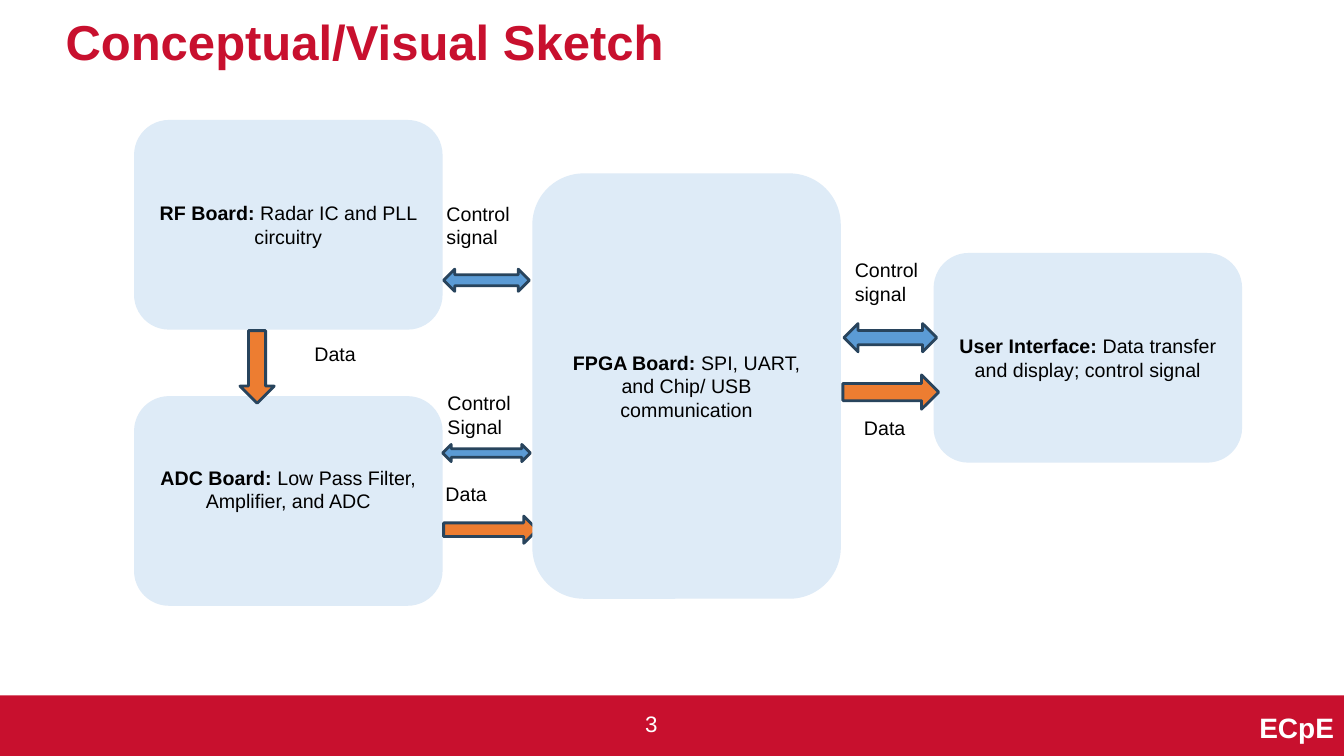
from dataclasses import dataclass

from pptx import Presentation
from pptx.dml.color import RGBColor
from pptx.enum.shapes import MSO_SHAPE as Shape
from pptx.enum.text import MSO_ANCHOR as Anchor, MSO_AUTO_SIZE as AutoSize, PP_ALIGN as Align
from pptx.util import Inches, Pt

COLORS = {
    "red": "C8102E",
    "white": "FFFFFF",
    "black": "000000",
    "board": "DEEBF7",
    "control": "5B9BD5",
    "data": "ED7D31",
    "outline": "28445D",
}
BOARD_W = 3.06
BOARD_H = 2.08
LABEL_H = 0.71


@dataclass
class Board:
    name: str
    detail: str
    left: float
    top: float
    height: float = BOARD_H
    bottom_inset: float = 0.05


@dataclass
class Arrow:
    kind: Shape
    signal: str
    left: float
    top: float
    width: float
    height: float


@dataclass
class Label:
    text: str
    left: float
    top: float
    width: float


LEFT_BOARDS = [
    Board("RF Board: ", "Radar IC and PLL circuitry", 1.33, 1.19),
    Board("ADC Board: ", "Low Pass Filter, Amplifier, and ADC", 1.33, 3.93, bottom_inset=0.28),
]
USER_INTERFACE = Board("User Interface: ", "Data transfer and display; control signal", 9.26, 2.51)
FPGA = Board("FPGA Board: ", "SPI, UART, and Chip/ USB communication", 5.28, 1.72, height=4.22)

ARROWS = [
    Arrow(Shape.LEFT_RIGHT_ARROW, "control", 4.4, 2.67, 0.85, 0.22),
    Arrow(Shape.LEFT_RIGHT_ARROW, "control", 4.39, 4.41, 0.87, 0.17),
    Arrow(Shape.LEFT_RIGHT_ARROW, "control", 8.37, 3.21, 0.92, 0.28),
    Arrow(Shape.RIGHT_ARROW, "data", 4.4, 5.12, 0.93, 0.27),
    Arrow(Shape.RIGHT_ARROW, "data", 8.36, 3.72, 0.95, 0.34),
    Arrow(Shape.DOWN_ARROW, "data", 2.38, 3.28, 0.34, 0.72),
]

LABELS = [
    Label("Control signal", 4.33, 1.95, 1.05),
    Label("Control Signal", 4.34, 3.83, 0.97),
    Label("Control signal", 8.38, 2.51, 0.98),
    Label("Data", 4.32, 4.73, 1.07),
    Label("Data", 8.47, 4.08, 0.95),
    Label("Data", 3.02, 3.34, 0.9),
]


def rgb(name: str) -> RGBColor:
    return RGBColor.from_string(COLORS[name])


def add_run(p, text: str, *, size: float = 14, color: str = "black", bold: bool = False) -> None:
    r = p.add_run()
    r.text = text
    r.font.name = "Arial"
    r.font.size = Pt(size)
    r.font.bold = bold
    r.font.color.rgb = rgb(color)


def add_text(slide, text: str, left: float, top: float, width: float, height: float, *,
             align: Align = Align.LEFT, anchor: Anchor = Anchor.TOP, **font) -> None:
    s = slide.shapes.add_textbox(Inches(left), Inches(top), Inches(width), Inches(height))
    tf = s.text_frame
    tf.word_wrap = True
    tf.vertical_anchor = anchor
    p = tf.paragraphs[0]
    p.alignment = align
    add_run(p, text, **font)


def add_shape(slide, kind: Shape, left: float, top: float, width: float, height: float,
              fill: str, outline: bool = False):
    s = slide.shapes.add_shape(kind, Inches(left), Inches(top), Inches(width), Inches(height))
    s.shadow.inherit = False
    s.fill.solid()
    s.fill.fore_color.rgb = rgb(fill)
    if outline:
        s.line.color.rgb = rgb("outline")
        s.line.width = Pt(2)
    else:
        s.line.fill.background()
    return s


def add_board(slide, board: Board) -> None:
    s = add_shape(slide, Shape.ROUNDED_RECTANGLE, board.left, board.top, BOARD_W, board.height, "board")
    tf = s.text_frame
    tf.word_wrap = True
    tf.vertical_anchor = Anchor.MIDDLE
    tf.margin_bottom = Inches(board.bottom_inset)
    p = tf.paragraphs[0]
    p.alignment = Align.CENTER
    add_run(p, board.name, bold=True)
    add_run(p, board.detail)


def add_title(slide, text: str) -> None:
    s = slide.shapes.title
    s.left, s.top, s.width, s.height = Inches(0.55), Inches(0.13), Inches(12.25), Inches(0.63)
    tf = s.text_frame
    tf.auto_size = AutoSize.NONE
    tf.vertical_anchor = Anchor.MIDDLE
    p = tf.paragraphs[0]
    p.alignment = Align.LEFT
    p.line_spacing = 0.9
    add_run(p, text, size=35, color="red", bold=True)


def main() -> None:
    prs = Presentation()
    prs.slide_width, prs.slide_height = Inches(13.33), Inches(7.5)
    slide = prs.slides.add_slide(prs.slide_layouts[5])

    add_shape(slide, Shape.RECTANGLE, 0, 6.9, 13.33, 0.6, "red")
    add_text(slide, "ECpE", 8.83, 7.02, 4.5, 0.4, align=Align.RIGHT, anchor=Anchor.MIDDLE,
             size=20, color="white", bold=True)
    add_title(slide, "Conceptual/Visual Sketch")

    for board in [*LEFT_BOARDS, USER_INTERFACE]:
        add_board(slide, board)
    for arrow in ARROWS:
        add_shape(slide, arrow.kind, arrow.left, arrow.top, arrow.width, arrow.height,
                  arrow.signal, outline=True)
    for label in LABELS:
        add_text(slide, label.text, label.left, label.top, label.width, LABEL_H)
    add_board(slide, FPGA)  # covers the tip of the ADC data arrow

    add_text(slide, "3", 6.3, 7, 0.37, 0.37, size=16, color="white")
    prs.save("out.pptx")


if __name__ == "__main__":
    main()
